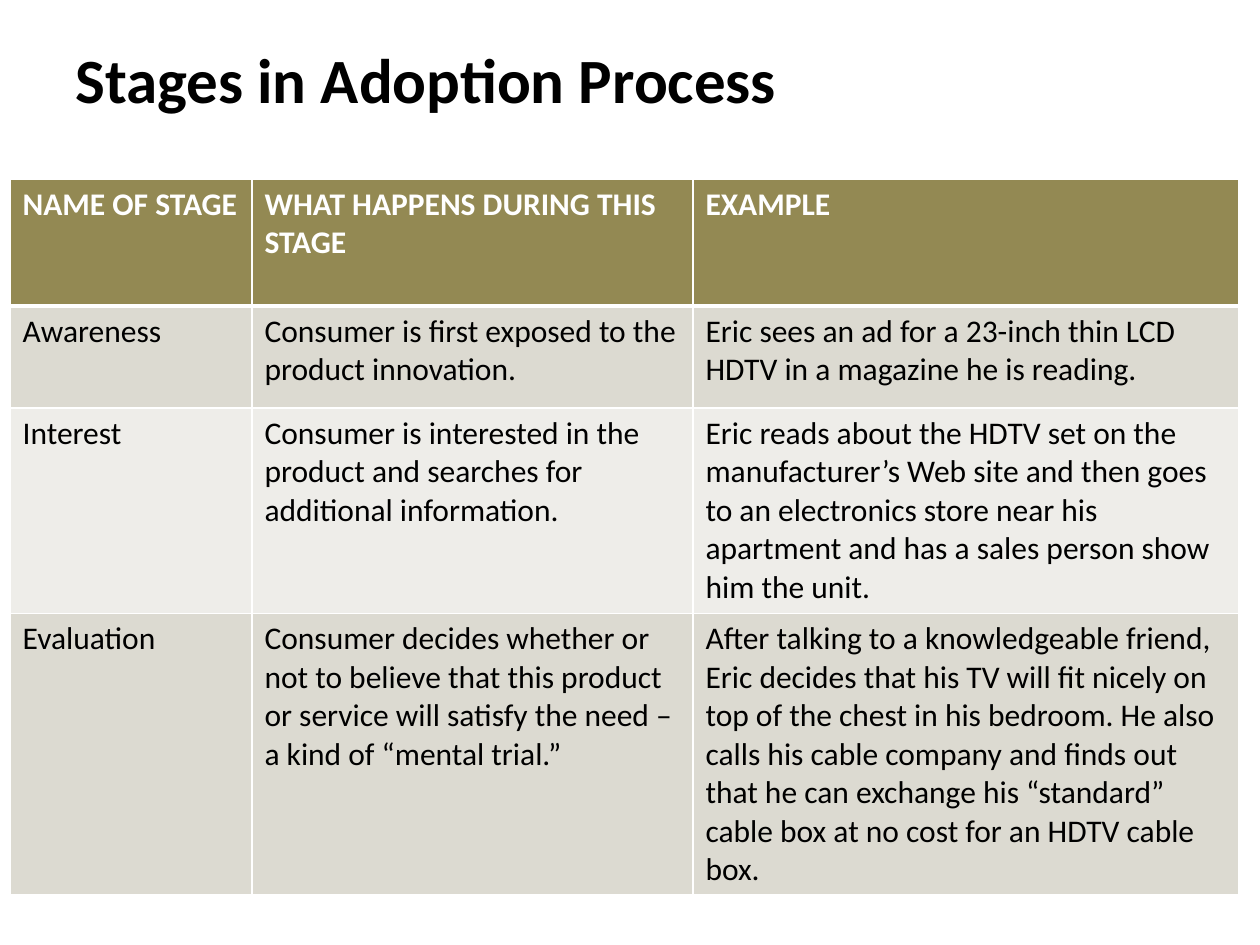
"""Build a slide with a table of the stages in the adoption process."""
from dataclasses import dataclass

from lxml import etree
from pptx import Presentation
from pptx import util as u
from pptx.dml.color import RGBColor
from pptx.enum import text
from pptx.oxml import ns


@dataclass(frozen=True)
class Theme:
    font: str = "Calibri"
    title_size: int = 36
    table_size: int = 18
    dark: str = "000000"
    light: str = "FFFFFF"
    header: str = "938953"
    bands: tuple = ("DCDAD1", "EEEDE9")
    thin: int = 1
    thick: int = 3


theme = Theme()


def format_runs(paragraph, size, color, bold):
    for run in paragraph.runs:
        run.font.name = theme.font
        run.font.size = u.Pt(size)
        run.font.bold = bold
        run.font.color.rgb = RGBColor.from_string(color)


def add_border(cell, side, width):
    properties = cell._tc.get_or_add_tcPr()
    line = etree.SubElement(properties, ns.qn(f"a:ln{side}"), w=str(u.Pt(width)))
    fill = etree.SubElement(line, ns.qn("a:solidFill"))
    etree.SubElement(fill, ns.qn("a:srgbClr"), val=theme.light)


stages = [
    ("NAME OF STAGE", "WHAT HAPPENS DURING THIS STAGE", "EXAMPLE"),
    (
        "Awareness",
        "Consumer is first exposed to the product innovation.",
        "Eric sees an ad for a 23-inch thin LCD HDTV in a magazine he is reading.",
    ),
    (
        "Interest",
        "Consumer is interested in the product and searches for additional information.",
        "Eric reads about the HDTV set on the manufacturer’s Web site and then goes to an "
        "electronics store near his apartment and has a sales person show him the unit.",
    ),
    (
        "Evaluation",
        "Consumer decides whether or not to believe that this product or service will "
        "satisfy the need –a kind of “mental trial.”",
        "After talking to a knowledgeable friend, Eric decides that his TV will fit nicely on "
        "top of the chest in his bedroom. He also calls his cable company and finds out that "
        "he can exchange his “standard” cable box at no cost for an HDTV cable box.",
    ),
]
column_widths = [1.92, 3.5, 4.33]
row_heights = [1.01, 0.81, 1.63, 2.23]

presentation = Presentation()
presentation.slide_width = u.Inches(10)
presentation.slide_height = u.Inches(7.5)
slide = presentation.slides.add_slide(presentation.slide_layouts[6])

title = slide.shapes.add_textbox(u.Inches(0.5), u.Inches(0.25), u.Inches(9), u.Inches(0.75))
title.text_frame.word_wrap = True
title.text_frame.vertical_anchor = text.MSO_ANCHOR.MIDDLE
title.text_frame.text = "Stages in Adoption Process"
format_runs(title.text_frame.paragraphs[0], theme.title_size, theme.dark, True)

table = slide.shapes.add_table(
    len(row_heights), len(column_widths), u.Inches(0.08), u.Inches(1.42),
    u.Inches(sum(column_widths)), u.Inches(sum(row_heights)),
).table
for column, width in zip(table.columns, column_widths):
    column.width = u.Inches(width)

for row_index, (row, height, stage) in enumerate(zip(table.rows, row_heights, stages)):
    row.height = u.Inches(height)
    is_header = row_index == 0
    fill_color = theme.header if is_header else theme.bands[(row_index - 1) % 2]
    text_color = theme.light if is_header else theme.dark
    top_width = theme.thick if row_index == 1 else theme.thin
    bottom_width = theme.thick if is_header else theme.thin
    border_widths = {"L": theme.thin, "R": theme.thin, "T": top_width, "B": bottom_width}
    for cell, words in zip(row.cells, stage):
        cell.text_frame.text = words
        format_runs(cell.text_frame.paragraphs[0], theme.table_size, text_color, is_header)
        for side, border_width in border_widths.items():
            add_border(cell, side, border_width)
        cell.fill.solid()
        cell.fill.fore_color.rgb = RGBColor.from_string(fill_color)

presentation.save("out.pptx")
